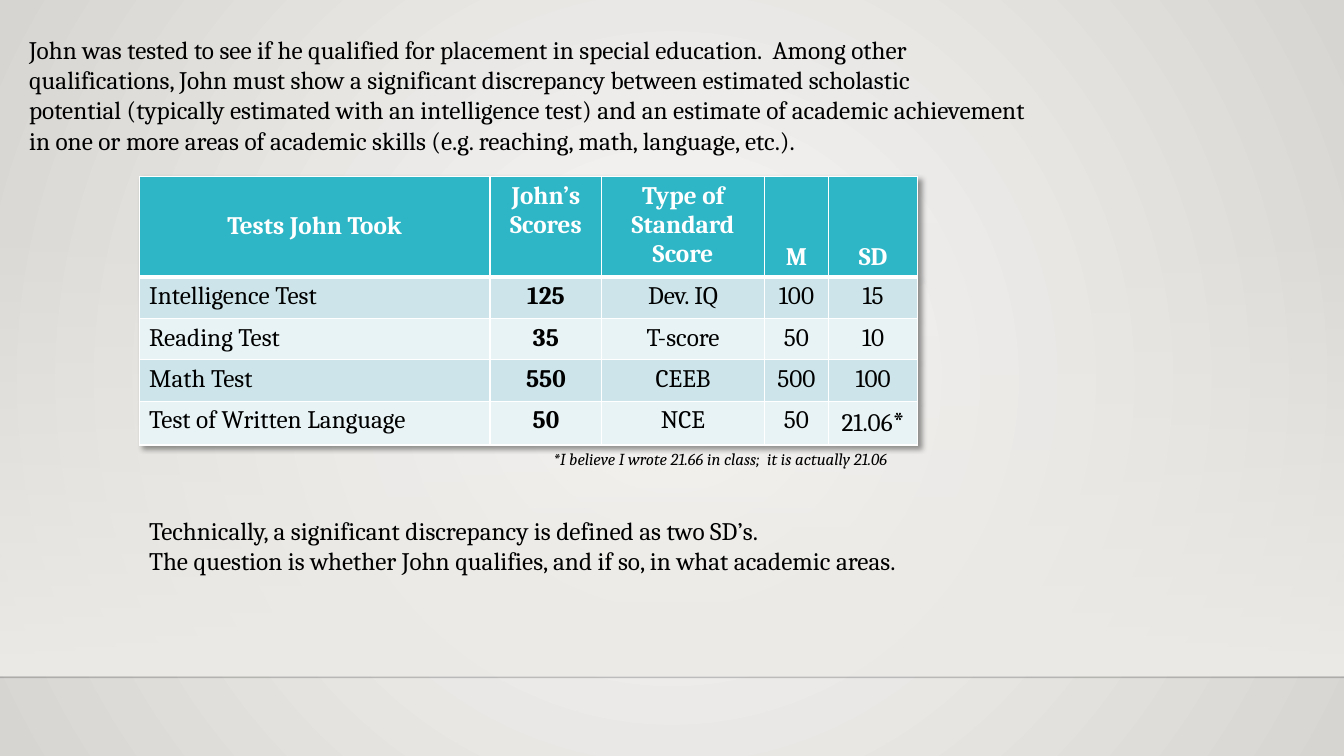
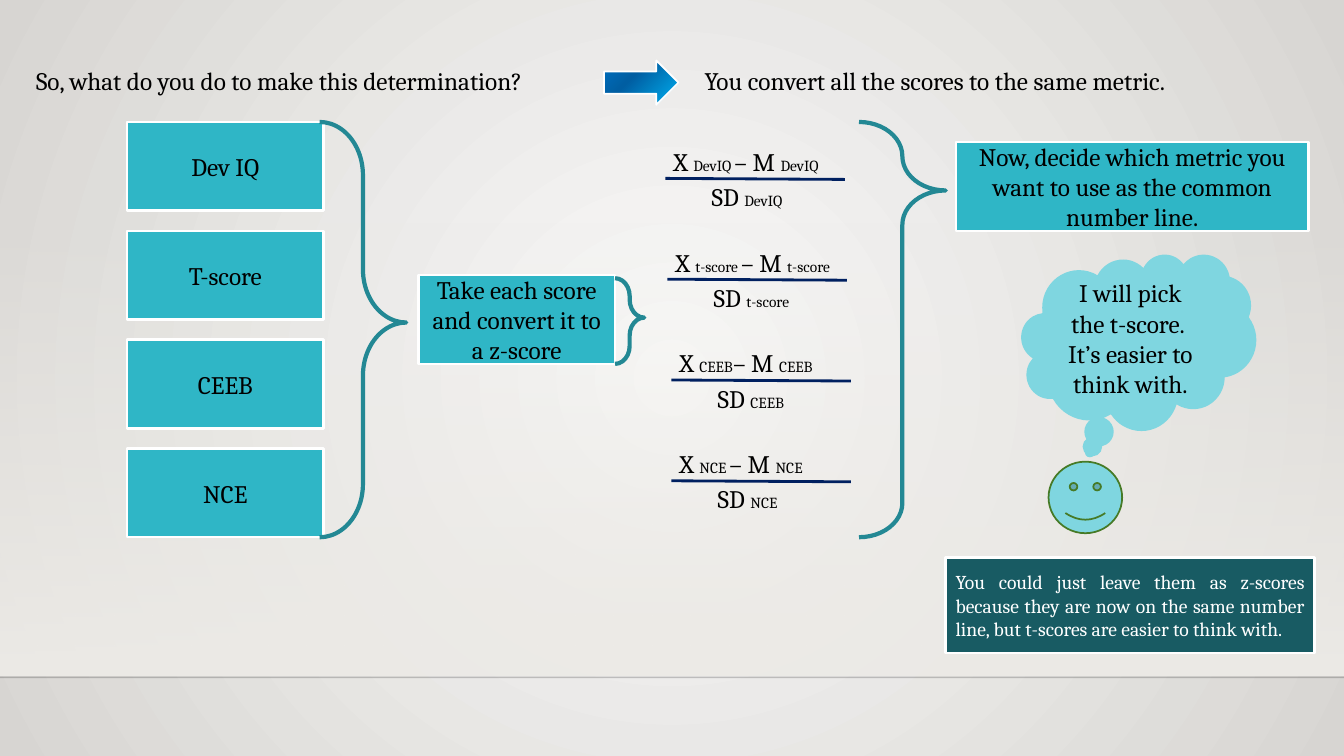
"""Builds two slides on comparing test scores in a common metric."""
import pptx
import pptx.util
import pptx.oxml
import pptx.oxml.ns
import pptx.dml.color
import pptx.enum.shapes
import pptx.enum.text

Inches = pptx.util.Inches
Pt = pptx.util.Pt
Shape = pptx.enum.shapes.MSO_SHAPE
Anchor = pptx.enum.text.MSO_ANCHOR
Align = pptx.enum.text.PP_ALIGN
NAMESPACE = pptx.oxml.ns.nsdecls("a")

FONT = "Cambria"
BLACK, WHITE = "000000", "FFFFFF"
TEAL, DARK_TEAL, PALE_TEAL, BRACE_TEAL = "2FB6C6", "185B63", "7FD6E0", "238894"
NAVY, OLIVE = "002060", "467A26"
ROW_FILLS = ("CDE5EA", "E8F3F5")
PAGE_STOPS = [(0, "FAFAF9", 100), (100, "D7D5D2", 100)]
BAND_STOPS = [(0, "EDEBE7", 0), (100, "EDEBE7", 100)]
ARROW_STOPS = [(0, "0070C0", 100), (38, "005EA2", 100), (100, "00B0F0", 100)]
CIRCLE = '<a:path path="circle"><a:fillToRect l="50000" t="50000" r="50000" b="50000"/></a:path>'

INTRO = """John was tested to see if he qualified for placement in special education.  Among other
qualifications, John must show a significant discrepancy between estimated scholastic
potential (typically estimated with an intelligence test) and an estimate of academic achievement
in one or more areas of academic skills (e.g. reaching, math, language, etc.)."""
FOOTNOTE = "*I believe I wrote 21.66 in class;  it is actually 21.06"
QUESTION = """Technically, a significant discrepancy is defined as two SD’s.
The question is whether John qualifies, and if so, in what academic areas."""
SCORES = [
    ("Tests John Took", "John’s Scores", "Type of Standard Score", "M", "SD"),
    ("Intelligence Test", "125", "Dev. IQ", "100", "15"),
    ("Reading Test", "35", "T-score", "50", "10"),
    ("Math Test", "550", "CEEB", "500", "100"),
    ("Test of Written Language", "50", "NCE", "50", "21.06"),
]
COLUMN_WIDTHS = (3.48, 1.11, 1.61, 0.64, 0.88)
ROW_HEIGHTS = (1, 0.41, 0.41, 0.41, 0.43)
HEADER_ANCHORS = (Anchor.MIDDLE, Anchor.TOP, Anchor.TOP, Anchor.BOTTOM, Anchor.BOTTOM)

HEADINGS = [
    (0.26, 5.56, "So, what do you do to make this determination?"),
    (6.89, 5.22, "You convert all the scores to the same metric."),
]
METRICS = ["Dev IQ", "T-score", "CEEB", "NCE"]
FRACTIONS = [("DevIQ", 6.58, " "), ("t-score", 6.6, " "), ("CEEB", 6.64, ""), ("NCE", 6.64, " ")]
BRACES = [
    (3.17, 1.21, 0.86, 4.12, 0.483),
    (6.1, 2.76, 0.29, 0.85, 0.46),
    (8.52, 1.21, 0.86, 4.12, 0.165),
]
TEAL_BOXES = [(1.26, 1.21 + 1.08 * row, 1.95, name) for row, name in enumerate(METRICS)] + [
    (4.15, 2.73, 1.95, "Take each score and convert it to a z-score"),
    (9.48, 1.41, 3.5, "Now, decide which metric you want to use as the common number line."),
]
THOUGHT = "I will pick the t-score.  It’s easier to think with."
ADVICE = (
    "You could just leave them as z-scores because they are now on the same "
    "number line, but t-scores are easier to think with."
)


def color(value):
    return pptx.dml.color.RGBColor.from_string(value)


def set_gradient(fill, element, stops, direction):
    fill.gradient()
    gradient = element.find(".//" + pptx.oxml.ns.qn("a:gradFill"))
    for child in list(gradient):
        gradient.remove(child)
    marks = "".join(
        f'<a:gs pos="{place * 1000}"><a:srgbClr val="{value}">'
        f'<a:alpha val="{alpha * 1000}"/></a:srgbClr></a:gs>'
        for place, value, alpha in stops
    )
    parts = pptx.oxml.parse_xml(f"<a:gradFill {NAMESPACE}><a:gsLst>{marks}</a:gsLst>{direction}</a:gradFill>")
    gradient.extend(list(parts))


def linear(degrees):
    return f'<a:lin ang="{degrees * 60000}" scaled="0"/>'


def style_run(span, size=18, value=BLACK, bold=False, italic=False):
    span.font.name = FONT
    span.font.size = Pt(size)
    span.font.color.rgb = color(value)
    span.font.bold = bold
    span.font.italic = italic


def write(frame, text, align=Align.LEFT, **style):
    frame.text = text
    for para in frame.paragraphs:
        para.alignment = align
        for span in para.runs:
            style_run(span, **style)


def add_text(page, left, top, width, height, text="", **style):
    box = page.shapes.add_textbox(Inches(left), Inches(top), Inches(width), Inches(height))
    box.text_frame.word_wrap = True
    write(box.text_frame, text, **style)
    return box


def add_spans(para, spans):
    for text, size in spans:
        span = para.add_run()
        span.text = text
        style_run(span, size)


def add_shape(page, kind, left, top, width, height, fill=None, line=None, weight=1.75):
    shape = page.shapes.add_shape(kind, Inches(left), Inches(top), Inches(width), Inches(height))
    shape.shadow.inherit = False
    if fill:
        shape.fill.solid()
        shape.fill.fore_color.rgb = color(fill)
    else:
        shape.fill.background()
    if line:
        shape.line.color.rgb = color(line)
        shape.line.width = Pt(weight)
    else:
        shape.line.fill.background()
    return shape


def add_line(page, left, top, right, bottom, value, weight):
    line = page.shapes.add_connector(
        pptx.enum.shapes.MSO_CONNECTOR.STRAIGHT, Inches(left), Inches(top), Inches(right), Inches(bottom)
    )
    line.line.color.rgb = color(value)
    line.line.width = Pt(weight)
    line.element.spPr.append(pptx.oxml.parse_xml(f"<a:effectLst {NAMESPACE}/>"))
    return line


def dress_master(master, page):
    set_gradient(master.background.fill, master.element, PAGE_STOPS, CIRCLE)
    band = add_shape(page, Shape.RECTANGLE, 0, 2.2, 13.33, 4.5)
    set_gradient(band.fill, band.element, BAND_STOPS, linear(90))
    rule = add_line(page, 0, 6.72, 13.33, 6.72, "000001", 1)
    tint = rule.element.find(".//" + pptx.oxml.ns.qn("a:srgbClr"))
    tint.append(pptx.oxml.parse_xml(f'<a:alpha {NAMESPACE} val="20000"/>'))
    for number, part in enumerate((band, rule), 100):
        part.element.find(".//" + pptx.oxml.ns.qn("p:cNvPr")).set("id", str(number))
        master.shapes.element.append(part.element)


def set_borders(cell, bottom_weight):
    properties = cell._tc.get_or_add_tcPr()
    weights = {"lnL": 1, "lnR": 1, "lnT": 1, "lnB": bottom_weight}
    for position, (side, weight) in enumerate(weights.items()):
        border = pptx.oxml.parse_xml(
            f'<a:{side} {NAMESPACE} w="{Pt(weight)}"><a:solidFill>'
            f'<a:srgbClr val="{WHITE}"/></a:solidFill></a:{side}>'
        )
        properties.insert(position, border)


def add_score_table(page):
    frame = page.shapes.add_table(
        len(SCORES), len(COLUMN_WIDTHS), Inches(1.38), Inches(1.75),
        Inches(sum(COLUMN_WIDTHS)), Inches(sum(ROW_HEIGHTS)),
    )
    table = frame.table
    shadow = pptx.oxml.parse_xml(
        f'<a:effectLst {NAMESPACE}><a:outerShdw blurRad="50800" dist="38100" dir="2700000">'
        f'<a:srgbClr val="{BLACK}"><a:alpha val="40000"/></a:srgbClr></a:outerShdw></a:effectLst>'
    )
    table._tbl.tblPr.insert(0, shadow)
    for column, width in zip(table.columns, COLUMN_WIDTHS):
        column.width = Inches(width)
    for row, height in zip(table.rows, ROW_HEIGHTS):
        row.height = Inches(height)
    for row, texts in enumerate(SCORES):
        header = row == 0
        for column, text in enumerate(texts):
            cell = table.cell(row, column)
            write(
                cell.text_frame, text,
                align=Align.CENTER if header or column else Align.LEFT,
                value=WHITE if header else BLACK,
                bold=header or column == 1,
            )
            cell.vertical_anchor = HEADER_ANCHORS[column] if header else Anchor.TOP
            cell.fill.solid()
            cell.fill.fore_color.rgb = color(TEAL if header else ROW_FILLS[(row - 1) % 2])
            set_borders(cell, 3 if header else 1)
    add_spans(table.cell(len(SCORES) - 1, 4).text_frame.paragraphs[0], [("*", 20)])


def add_fraction(page, left, top, metric, gap):
    numerator = [("X ", 18), (metric, 11), (gap, 10), ("– M ", 18), (metric, 11)]
    upper = add_text(page, left, top, 1.91, 0.4)
    add_spans(upper.text_frame.paragraphs[0], [part for part in numerator if part[0]])
    lower = add_text(page, left + 0.38, top + 0.35, 1.05, 0.4)
    add_spans(lower.text_frame.paragraphs[0], [("SD ", 18), (metric, 11)])
    add_line(page, left + 0.02, top + 0.37, left + 1.8, top + 0.38, NAVY, 2)


def build_scores(page):
    add_text(page, 0.19, 0.29, 10.97, 1.31, INTRO)
    add_score_table(page)
    add_text(page, 5.39, 4.4, 3.69, 0.3, FOOTNOTE, size=12, italic=True)
    add_text(page, 1.38, 5.06, 8.3, 0.71, QUESTION)


def build_conversion(page):
    for left, width, text in HEADINGS:
        add_text(page, left, 0.6, width, 0.4, text)
    arrow = add_shape(page, Shape.RIGHT_ARROW, 5.99, 0.6, 0.74, 0.44, line=WHITE, weight=1.25)
    set_gradient(arrow.fill, arrow.element, ARROW_STOPS, linear(45))
    for left, top, width, text in TEAL_BOXES:
        box = add_shape(page, Shape.RECTANGLE, left, top, width, 0.88, TEAL, WHITE)
        write(box.text_frame, text, align=Align.CENTER)
    for left, top, width, height, point in BRACES:
        brace = add_shape(page, Shape.RIGHT_BRACE, left, top, width, height, line=BRACE_TEAL, weight=3)
        brace.adjustments[0] = 0.614
        brace.adjustments[1] = point
    for row, (metric, left, gap) in enumerate(FRACTIONS):
        add_fraction(page, left, 1.4 + row, metric, gap)
    cloud = add_shape(page, Shape.CLOUD_CALLOUT, 10.13, 2.52, 2.33, 1.75, PALE_TEAL)
    write(cloud.text_frame, THOUGHT, align=Align.CENTER)
    add_shape(page, Shape.SMILEY_FACE, 10.4, 4.58, 0.73, 0.71, PALE_TEAL, OLIVE, 1.25)
    advice = add_shape(page, Shape.RECTANGLE, 9.38, 5.53, 3.66, 0.95, DARK_TEAL, WHITE)
    write(advice.text_frame, ADVICE, align=Align.JUSTIFY, size=14, value=WHITE)


def main():
    deck = pptx.Presentation()
    deck.slide_width = Inches(13.33)
    deck.slide_height = Inches(7.5)
    pages = [deck.slides.add_slide(deck.slide_layouts[6]) for _ in range(2)]
    dress_master(deck.slide_master, pages[0])
    build_scores(pages[0])
    build_conversion(pages[1])
    deck.save("out.pptx")


if __name__ == "__main__":
    main()
